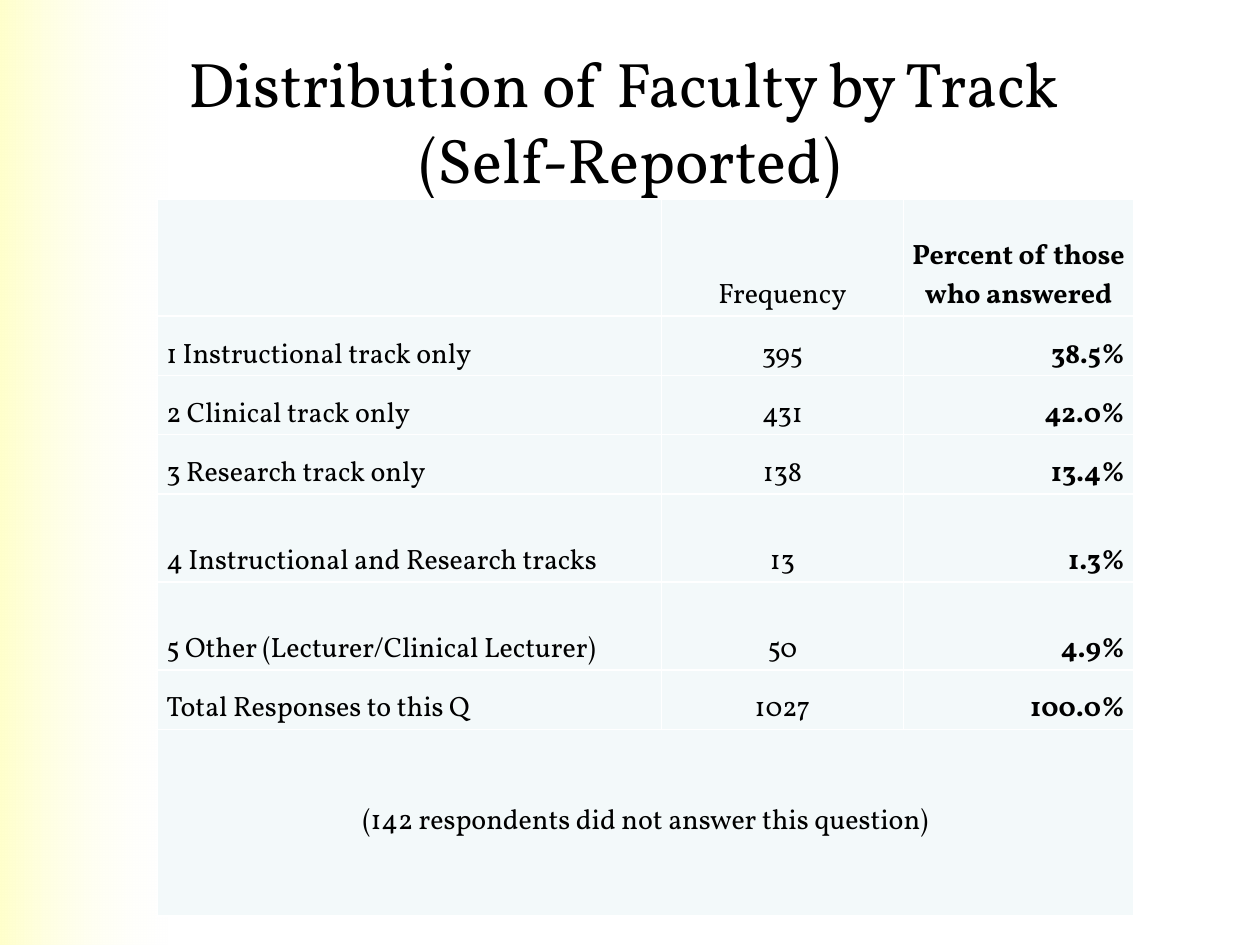
from lxml import etree
from pptx import Presentation
from pptx.dml.color import RGBColor
from pptx.enum import shapes, text
from pptx.oxml.ns import qn
from pptx.util import Inches, Pt

FONT = "Vollkorn"
COLORS = {"text": "000000", "cell": "F3F9FA", "border": "FFFFFF",
          "band": "FFFFCC", "band_end": "FFFFF4"}
LEFT, CENTER, RIGHT = text.PP_ALIGN.LEFT, text.PP_ALIGN.CENTER, text.PP_ALIGN.RIGHT

TITLE = "Distribution of Faculty by Track \v(Self-Reported)"
ROWS = [
    ("", "Frequency", "Percent of those who answered"),
    ("1 Instructional track only", "395", "38.5%"),
    ("2 Clinical track only", "431", "42.0%"),
    ("3 Research track only", "138", "13.4%"),
    ("4 Instructional and Research tracks", "13", "1.3%"),
    ("5 Other (Lecturer/Clinical Lecturer)", "50", "4.9%"),
    ("Total Responses to this Q", "1027", "100.0%"),
    ("(142 respondents did not answer this question)", "", ""),
]
COLUMN_WIDTHS = [4, 1.92, 1.83]
ROW_HEIGHTS = [0.93, 0.47, 0.47, 0.47, 0.7, 0.7, 0.47, 1.48]
COLUMN_ALIGNS = [LEFT, CENTER, RIGHT]


def color(name):
    return RGBColor.from_string(COLORS[name])


def write(frame, content, size=16, bold=False, align=LEFT):
    paragraph = frame.paragraphs[0]
    paragraph.text = content
    paragraph.alignment = align
    font = paragraph.font
    font.size, font.bold, font.name = Pt(size), bold, FONT
    font.color.rgb = color("text")
    for run in paragraph.runs:
        run.font.size, run.font.bold, run.font.name = Pt(size), bold, FONT
        run.font.color.rgb = color("text")


def add_borders(cell):
    properties = cell._tc.get_or_add_tcPr()
    for index, side in enumerate(("a:lnL", "a:lnR", "a:lnT", "a:lnB")):
        line = etree.Element(qn(side), w=str(Pt(1)))
        fill = etree.SubElement(line, qn("a:solidFill"))
        etree.SubElement(fill, qn("a:srgbClr"), val=COLORS["border"])
        properties.insert(index, line)


def add_band(slide):
    """Put a yellow band that fades to clear behind everything else."""
    band = slide.shapes.add_shape(shapes.MSO_SHAPE.RECTANGLE, 0, 0, Inches(1.33), Inches(7.5))
    band.shadow.inherit = False
    band.line.fill.background()
    band.fill.gradient()
    band.fill.gradient_angle = 0
    for stop, position, name in zip(band.fill.gradient_stops, (0, 1), ("band", "band_end")):
        stop.position = position
        stop.color.rgb = color(name)
    end_color = list(band._element.iter(qn("a:srgbClr")))[-1]
    etree.SubElement(end_color, qn("a:alpha"), val="0")
    slide.shapes._spTree.insert(2, band._element)


def add_title(slide):
    title = slide.shapes.title
    title.left, title.top = Inches(0.5), Inches(0.33)
    title.width, title.height = Inches(9), Inches(1.25)
    title.text_frame.word_wrap = True
    title.text_frame.auto_size = text.MSO_AUTO_SIZE.NONE
    title.text_frame.vertical_anchor = text.MSO_ANCHOR.MIDDLE
    write(title.text_frame, TITLE, size=36, align=CENTER)


def add_track_table(slide):
    table = slide.shapes.add_table(
        len(ROWS), len(COLUMN_WIDTHS), Inches(1.25), Inches(1.58),
        Inches(sum(COLUMN_WIDTHS)), Inches(sum(ROW_HEIGHTS))).table
    table.first_row = table.horz_banding = False
    for column, width in zip(table.columns, COLUMN_WIDTHS):
        column.width = Inches(width)
    for row, height in zip(table.rows, ROW_HEIGHTS):
        row.height = Inches(height)

    last = len(ROWS) - 1
    table.cell(last, 0).merge(table.cell(last, 2))
    for row, values in enumerate(ROWS):
        for column, value in enumerate(values):
            cell = table.cell(row, column)
            cell.margin_left = cell.margin_right = Inches(0.07)
            cell.margin_top = cell.margin_bottom = 0
            cell.vertical_anchor = text.MSO_ANCHOR.MIDDLE if row == last else text.MSO_ANCHOR.BOTTOM
            cell.fill.solid()
            cell.fill.fore_color.rgb = color("cell")
            add_borders(cell)
            align = CENTER if row in (0, last) else COLUMN_ALIGNS[column]
            write(cell.text_frame, value, bold=column == 2, align=align)


def main():
    presentation = Presentation()
    presentation.slide_width, presentation.slide_height = Inches(10), Inches(7.5)
    slide = presentation.slides.add_slide(presentation.slide_layouts[5])
    add_band(slide)
    add_title(slide)
    add_track_table(slide)
    presentation.save("out.pptx")


if __name__ == "__main__":
    main()
